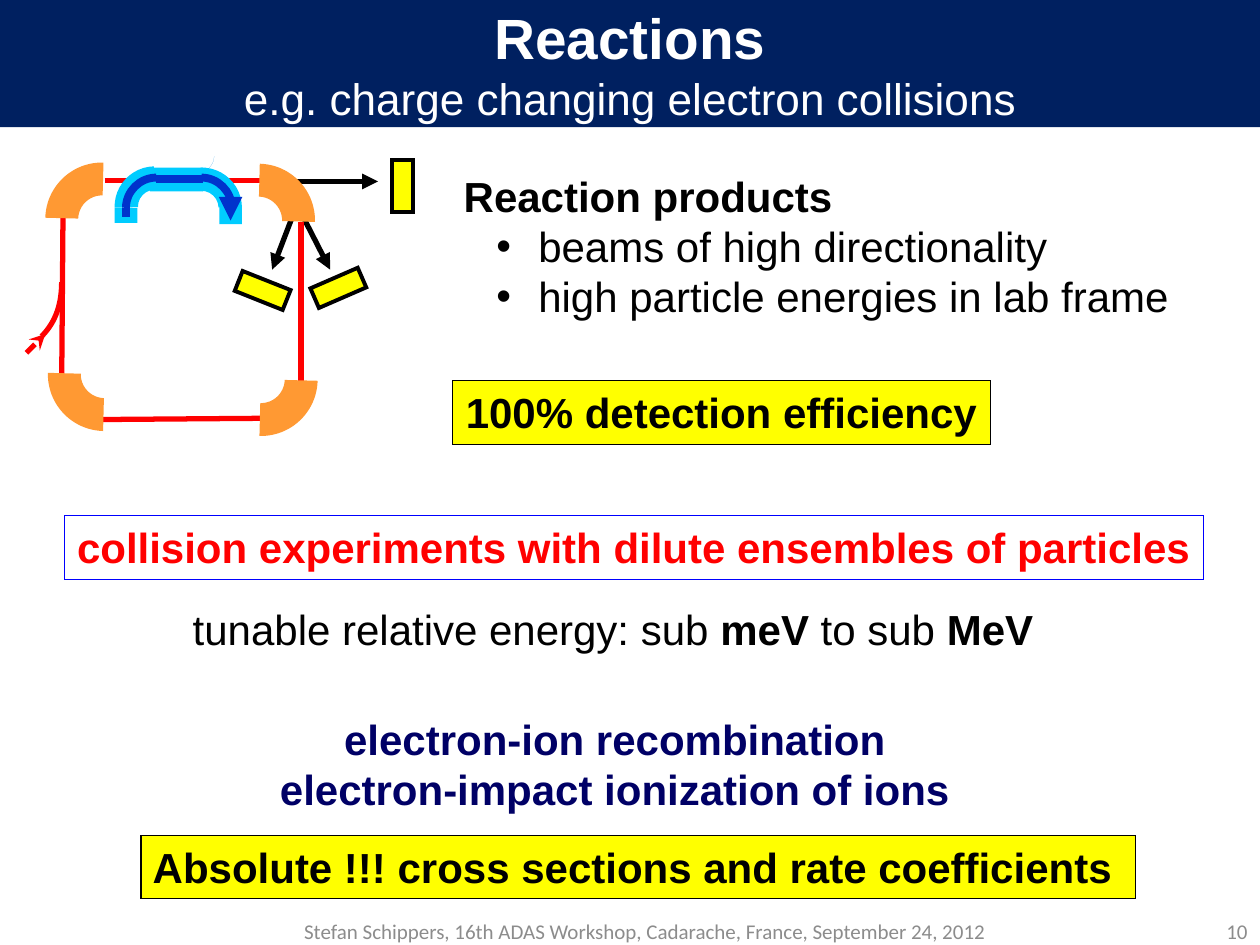
from lxml.etree import SubElement
from pptx import Presentation
from pptx.dml.color import RGBColor
from pptx.enum.shapes import MSO_CONNECTOR, MSO_SHAPE
from pptx.enum.text import MSO_ANCHOR, PP_ALIGN
from pptx.oxml.ns import qn
from pptx.util import Inches, Pt

NAVY = RGBColor(0x00, 0x20, 0x60)
INK = RGBColor(0x00, 0x00, 0x66)
BLUE = RGBColor(0x00, 0x00, 0xFF)
BEAM = RGBColor(0x00, 0x33, 0xCC)
SKY = RGBColor(0x00, 0x89, 0xE0)
CYAN = RGBColor(0x00, 0xCC, 0xFF)
ORANGE = RGBColor(0xFF, 0x99, 0x33)
RED = RGBColor(0xFF, 0x00, 0x00)
YELLOW = RGBColor(0xFF, 0xFF, 0x00)
BLACK = RGBColor(0x00, 0x00, 0x00)
WHITE = RGBColor(0xFF, 0xFF, 0xFF)
GRAY = RGBColor(0x8C, 0x8C, 0x8C)

TITLE = ["Reactions", "e.g. charge changing electron collisions"]
LIST = ["Reaction products", " beams of high directionality",
        " high particle energies in lab frame"]

# from, to, colour, width, arrowhead
PRODUCTS = [
    ((2.18, 1.44), (3, 1.44), BLACK, 3, "triangle"),
    ((2.39, 1.69), (2.62, 2.14), BLACK, 3, "triangle"),
    ((2.34, 1.67), (2.16, 2.14), BLACK, 3, "triangle"),
]
RING = [
    ((0.76, 3.33), (2.1, 3.32), RED, 3, None),
    ((0.83, 1.43), (2.11, 1.43), RED, 3, None),
    ((0.5, 1.7), (0.49, 3), RED, 3, None),
    ((2.39, 1.76), (2.39, 3.04), RED, 3, None),
    ((0.21, 2.8), (0.36, 2.65), RED, 3, "stealth"),
]
COOLER = [
    ((1.61, 1.42), (1.24, 1.42), BEAM, 4.5, None),
    ((1.83, 1.68), (1.83, 1.75), BEAM, 4.5, "triangle"),
    ((1, 1.65), (1, 1.72), BEAM, 4.5, None),
]

# start, then two control points and an end for each bend
GLINT = [(1.57, 1.37), (1.64, 1.37), (1.7, 1.31), (1.7, 1.24),
         (1.7, 1.31), (1.64, 1.37), (1.57, 1.37)]
INJECT = [(0.49, 2.24), (0.49, 2.45), (0.42, 2.58), (0.33, 2.67)]
TURNS = [
    [(1.24, 1.41), (1.11, 1.41), (1, 1.52), (1, 1.65)],
    [(1.84, 1.65), (1.84, 1.52), (1.73, 1.41), (1.6, 1.41)],
]

# left, top, size, rotation, colour
BENDS = [
    (1.6, 1.3, 0.9, 46.5, ORANGE),
    (1.62, 2.56, 0.9, 136.5, ORANGE),
    (0.36, 1.29, 0.9, 316.5, ORANGE),
    (0.38, 2.52, 0.9, 226.5, ORANGE),
    (0.91, 1.32, 0.64, 313.5, CYAN),
    (1.28, 1.33, 0.64, 43.5, CYAN),
]
PIPES = [(1.19, 1.33, 0.42, 0.19), (1.74, 1.64, 0.18, 0.14),
         (0.91, 1.65, 0.18, 0.12)]
# left, top, rotation
COUNTERS = [(3.11, 1.27, 0), (2.6, 2.08, 66.5), (2, 2.1, 291.7)]

# box, fill, line, text colour, paragraphs of (text, bold) runs
NOTES = [
    ((3.59, 3.02, 4.27, 0.51), YELLOW, BLACK, BLACK,
     [[("100% detection efficiency", True)]]),
    ((2.1, 5.61, 5.56, 0.91), None, None, INK,
     [[("electron-ion recombination", True)],
      [("electron-impact ionization of ions", True)]]),
    ((0.51, 4.09, 9.04, 0.51), None, BLUE, RED,
     [[("collision experiments with dilute ensembles of particles", True)]]),
    ((1.43, 4.74, 6.87, 0.5), None, None, BLACK,
     [[("tunable relative energy: sub ", False), ("meV", True),
       (" to sub ", False), ("MeV", True)]]),
    ((1.12, 6.63, 7.89, 0.5), YELLOW, BLACK, BLACK,
     [[("Absolute !!! cross sections and rate coefficients ", True)]]),
]
FOOTER = [
    ((1.83, 7.28, 6.58, 0.22), PP_ALIGN.CENTER,
     "Stefan Schippers, 16th ADAS Workshop, Cadarache, France, September 24, 2012"),
    ((9.41, 7.28, 0.59, 0.22), PP_ALIGN.RIGHT, "10"),
]


def style(run, size, color, bold=False, name="Arial"):
    font = run.font
    font.size, font.bold, font.name = Pt(size), bold, name
    font.color.rgb = color


def place(shape, box):
    shape.left, shape.top, shape.width, shape.height = map(Inches, box)


def paint(shape, fill=None, line=None, width=0.75):
    shape.shadow.inherit = False
    if fill is None:
        shape.fill.background()
    else:
        shape.fill.solid()
        shape.fill.fore_color.rgb = fill
    if line is None:
        shape.line.fill.background()
    else:
        shape.line.color.rgb = line
        shape.line.width = Pt(width)
        SubElement(shape.line._get_or_add_ln(), qn("a:miter"), lim="800000")


def add_line(start, end, color, width, head):
    line = slide.shapes.add_connector(
        MSO_CONNECTOR.STRAIGHT, *map(Inches, start + end))
    line.line.color.rgb = color
    line.line.width = Pt(width)
    if head:
        SubElement(line.line._get_or_add_ln(), qn("a:tailEnd"), type=head)
    SubElement(line._element.spPr, qn("a:effectLst"))


def add_preset(kind, box, *look):
    shape = slide.shapes.add_shape(kind, *map(Inches, box))
    paint(shape, *look)
    return shape


def add_curve(points, *look):
    """Draw a freeform whose segments, three by three, become Bezier curves."""
    spots = [(Inches(x), Inches(y)) for x, y in points]
    pen = slide.shapes.build_freeform(*spots[0])
    pen.add_line_segments(spots[1:], close=False)
    shape = pen.convert_to_shape()
    track = next(shape._element.iter(qn("a:path")))
    steps = track.findall(qn("a:lnTo"))
    for i in range(0, len(steps), 3):
        bend = SubElement(track, qn("a:cubicBezTo"))
        for step in steps[i:i + 3]:
            bend.append(step[0])
            track.remove(step)
    paint(shape, *look)


deck = Presentation()
deck.slide_width, deck.slide_height = Inches(10), Inches(7.5)
slide = deck.slides.add_slide(deck.slide_layouts[1])

title = slide.shapes.title
place(title, (0, 0, 10, 1.01))
title.fill.solid()
title.fill.fore_color.rgb = NAVY
frame = title.text_frame
frame.text = "\v".join(TITLE)
frame.vertical_anchor = MSO_ANCHOR.MIDDLE
head, sub = frame.paragraphs[0].runs
style(head, 32.4, WHITE, True)
style(sub, 25.2, WHITE)

body = slide.placeholders[1]
place(body, (3.58, 1.3, 5.97, 1.31))
frame = body.text_frame
frame.text = "\n".join(LIST)
frame.word_wrap = False
for i, para in enumerate(frame.paragraphs):
    para.level = min(i, 1)
    para.space_before = Pt(0)
    props = para._p.get_or_add_pPr()
    props.set("marL", str(Inches(0.5 if i else 0)))
    props.set("indent", str(Inches(-0.24 if i else 0)))
    if i:
        SubElement(props, qn("a:buFont"), typeface="Arial")
        SubElement(props, qn("a:buChar"), char="•")
    else:
        SubElement(props, qn("a:buNone"))
    style(para.runs[0], 24, BLACK, i == 0)

for line in PRODUCTS + RING:
    add_line(*line)
add_curve(GLINT, SKY)
add_curve(INJECT, None, RED, 3)
for left, top, size, angle, color in BENDS:
    bend = add_preset(MSO_SHAPE.BLOCK_ARC, (left, top, size, size), color)
    bend.rotation = angle
    # quarter ring from 225 to 315 degrees, in 60000ths over 100000
    for i, value in enumerate((225 * 0.6, 315 * 0.6, 0.29)):
        bend.adjustments[i] = value
for box in PIPES:
    add_preset(MSO_SHAPE.RECTANGLE, box, CYAN)
for turn in TURNS:
    add_curve(turn, None, BEAM, 4.5)
for line in COOLER:
    add_line(*line)
for left, top, angle in COUNTERS:
    box = (left, top, 0.17, 0.41)
    counter = add_preset(MSO_SHAPE.RECTANGLE, box, YELLOW, BLACK, 2.25)
    counter.rotation = angle

for box, fill, edge, color, paras in NOTES:
    if edge is None:
        note = slide.shapes.add_textbox(*map(Inches, box))
    else:
        note = add_preset(MSO_SHAPE.RECTANGLE, box, fill, edge)
    frame = note.text_frame
    frame.word_wrap = False
    frame.vertical_anchor = MSO_ANCHOR.TOP
    frame.text = "\n".join("" for _ in paras)
    for para, parts in zip(frame.paragraphs, paras):
        para.alignment = PP_ALIGN.CENTER
        for text, bold in parts:
            run = para.add_run()
            run.text = text
            style(run, 24, color, bold)

for box, align, text in FOOTER:
    frame = slide.shapes.add_textbox(*map(Inches, box)).text_frame
    frame.word_wrap = True
    frame.vertical_anchor = MSO_ANCHOR.MIDDLE
    frame.text = text
    para = frame.paragraphs[0]
    para.alignment = align
    style(para.runs[0], 12, GRAY, name="Calibri")

deck.save("out.pptx")
